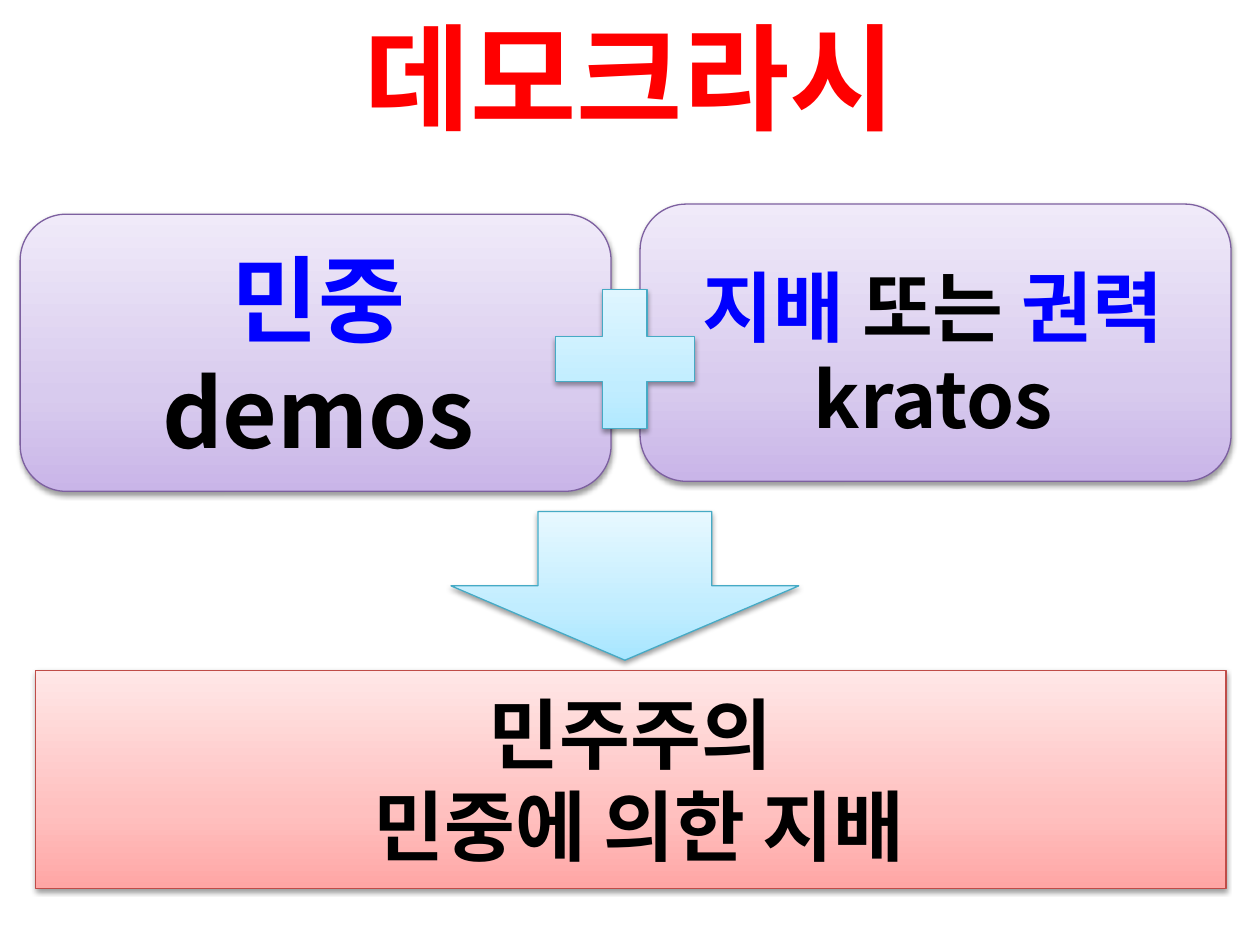
import pptx
import pptx.dml.color
import pptx.enum.shapes
import pptx.enum.text
import pptx.oxml
import pptx.oxml.ns
import pptx.util
import lxml.etree

Inches = pptx.util.Inches
Shape = pptx.enum.shapes.MSO_SHAPE
FONT = "Noto Sans CJK KR"
NS = 'xmlns:a="http://schemas.openxmlformats.org/drawingml/2006/main"'
RED, BLUE, BLACK = "FF0000", "0000FF", "000000"
LILAC = ("C9B5E8", "D8CBEE", "F0EAF9")
SKY = ("A7E6FF", "C1EDFF", "E7F8FF")
ROSE = ("FFA6A5", "FFC0BF", "FFE7E7")


def color(code):
    return pptx.dml.color.RGBColor.from_string(code)


def write(frame, lines, size):
    frame.word_wrap = True
    for i, line in enumerate(lines):
        para = frame.paragraphs[0] if i == 0 else frame.add_paragraph()
        para.alignment = pptx.enum.text.PP_ALIGN.CENTER
        for text, tint in line:
            run = para.add_run()
            run.text = text
            run.font.size = pptx.util.Pt(size)
            run.font.bold = True
            run.font.color.rgb = color(tint)
            run.font.name = FONT
            east = lxml.etree.SubElement(run.font._element, pptx.oxml.ns.qn("a:ea"))
            east.set("typeface", FONT)


deck = pptx.Presentation()
deck.slide_width = Inches(10)
deck.slide_height = Inches(7.5)
slide = deck.slides.add_slide(deck.slide_layouts[5])

title = slide.shapes.title
title.left, title.top = Inches(0), Inches(-0.03)
title.width, title.height = Inches(10), Inches(1.25)
title.text_frame.vertical_anchor = pptx.enum.text.MSO_ANCHOR.MIDDLE
write(title.text_frame, [[("데모크라시", RED)]], 66)

demos = [[("민중", BLUE)], [("demos", BLACK)]]
kratos = [[("지배", BLUE), (" 또는 ", BLACK), ("권력", BLUE)], [("kratos", BLACK)]]
rule = [[("민주주의", BLACK)], [(" 민중에 의한 지배", BLACK)]]

items = [
    (Shape.ROUNDED_RECTANGLE, (0.16, 1.7, 4.69, 2.2), LILAC, "7D60A0",
     (0.2, 1.86, 4.65, 1.92), demos, 54),
    (Shape.ROUNDED_RECTANGLE, (5.08, 1.62, 4.69, 2.2), LILAC, "7D60A0",
     (5.08, 2.01, 4.65, 1.58), kratos, 44),
    (Shape.MATH_PLUS, (4.21, 2.1, 1.5, 1.5), SKY, "46AAC5", None, None, None),
    (Shape.DOWN_ARROW, (3.58, 4.06, 2.76, 1.18), SKY, "46AAC5", None, None, None),
    (Shape.RECTANGLE, (0.28, 5.32, 9.45, 1.73), ROSE, "BF4C48",
     (0.28, 5.4, 9.45, 1.58), rule, 44),
]

for kind, place, tones, edge, area, lines, size in items:
    home = slide.shapes.add_group_shape().shapes if lines else slide.shapes
    shape = home.add_shape(kind, *map(Inches, place))
    shape.line.color.rgb = color(edge)
    shape.line.width = pptx.util.Pt(0.75)
    shape.shadow.inherit = False

    stops = "".join(
        f'<a:gs pos="{pos}000"><a:srgbClr val="{tone}"/></a:gs>'
        for pos, tone in zip((0, 35, 100), tones))
    fill = pptx.oxml.parse_xml(
        f'<a:gradFill {NS} rotWithShape="1"><a:gsLst>{stops}</a:gsLst>'
        '<a:lin ang="16200000" scaled="1"/></a:gradFill>')
    props = shape._element.spPr
    props.find(pptx.oxml.ns.qn("a:prstGeom")).addnext(fill)
    props.find(pptx.oxml.ns.qn("a:effectLst")).append(pptx.oxml.parse_xml(
        f'<a:outerShdw {NS} blurRad="{pptx.util.Pt(3.1)}" dist="{pptx.util.Pt(1.6)}" '
        'dir="5400000" rotWithShape="0"><a:srgbClr val="000000">'
        '<a:alpha val="38000"/></a:srgbClr></a:outerShdw>'))

    if lines:
        label = home.add_textbox(*map(Inches, area))
        write(label.text_frame, lines, size)
        label.text_frame.auto_size = pptx.enum.text.MSO_AUTO_SIZE.SHAPE_TO_FIT_TEXT

deck.save("out.pptx")
